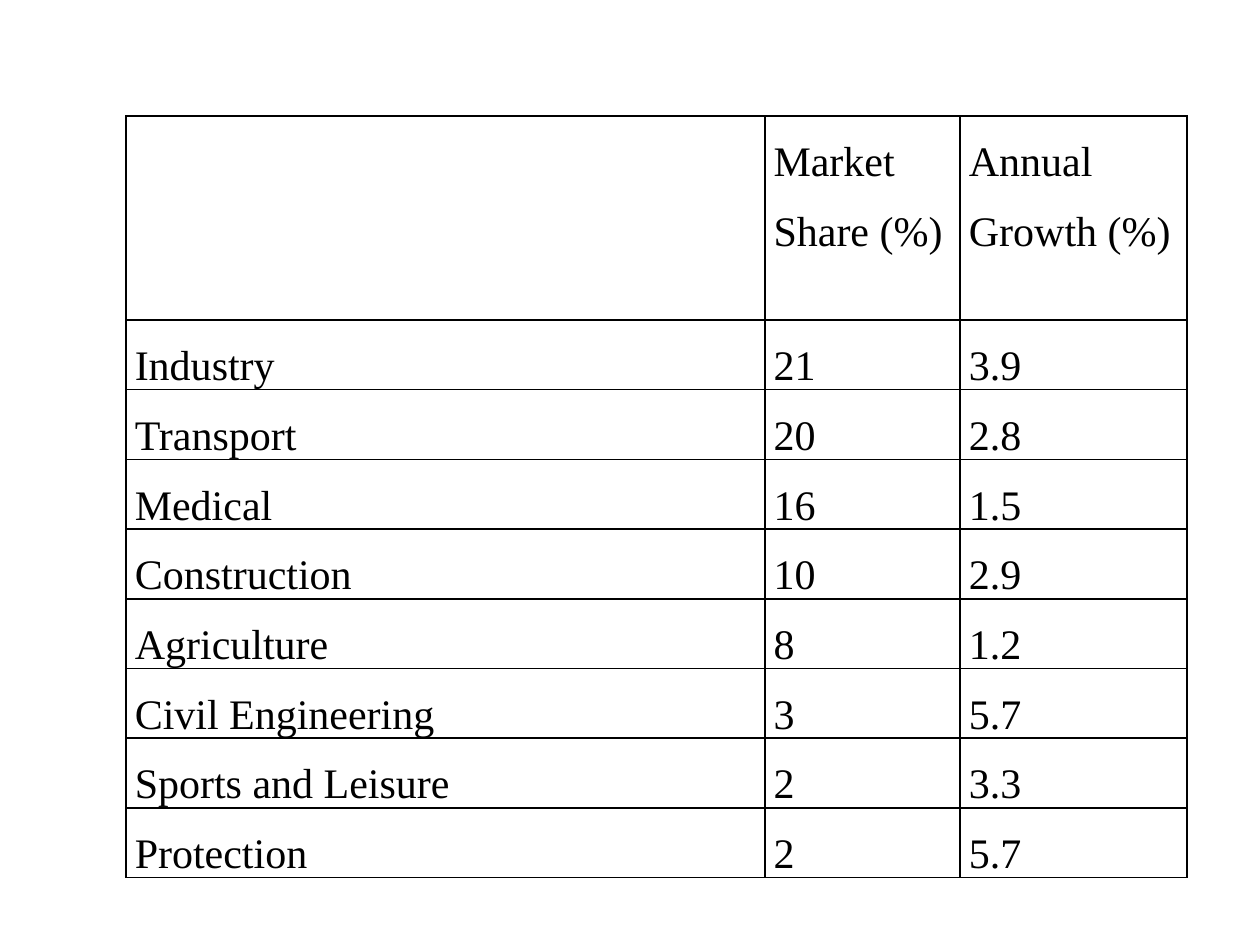
from lxml import etree
from pptx import Presentation
from pptx.dml.color import RGBColor
from pptx.oxml.ns import qn
from pptx.util import Inches, Pt

BLACK = RGBColor(0, 0, 0)
FONT = "Times New Roman"
SIDES = ("a:lnL", "a:lnR", "a:lnT", "a:lnB")

COLS = (5.07, 1.55, 1.8)
HEAD_H = 1.62
ROW_H = 0.55
ROWS = (
    ("", "Market Share (%)", "Annual Growth (%)"),
    ("Industry", "21", "3.9"),
    ("Transport", "20", "2.8"),
    ("Medical", "16", "1.5"),
    ("Construction", "10", "2.9"),
    ("Agriculture", "8", "1.2"),
    ("Civil Engineering", "3", "5.7"),
    ("Sports and Leisure", "2", "3.3"),
    ("Protection", "2", "5.7"),
)


def add_borders(cell):
    props = cell._tc.get_or_add_tcPr()
    for side in SIDES:
        line = etree.SubElement(props, qn(side), w=str(Pt(1)))
        fill = etree.SubElement(line, qn("a:solidFill"))
        etree.SubElement(fill, qn("a:srgbClr"), val=str(BLACK))


def fill_cell(cell, text):
    cell.margin_left = cell.margin_right = Inches(0.07)
    cell.margin_top = cell.margin_bottom = 0
    add_borders(cell)
    cell.fill.background()
    cell.text = text
    para = cell.text_frame.paragraphs[0]
    para.line_spacing = 1.5
    para.font.name = FONT
    para.font.size = Pt(24)
    para.font.color.rgb = BLACK


def add_market(slide, left, top, width, height):
    """Table of market share and growth by sector."""
    table = slide.shapes.add_table(
        len(ROWS), len(COLS), left, top, width, height).table
    table.first_row = table.horz_banding = False
    for col, size in zip(table.columns, COLS):
        col.width = Inches(size)
    for i, (row, texts) in enumerate(zip(table.rows, ROWS)):
        row.height = Inches(ROW_H if i else HEAD_H)
        for cell, text in zip(row.cells, texts):
            fill_cell(cell, text)


def main():
    deck = Presentation()
    deck.slide_width, deck.slide_height = Inches(10), Inches(7.5)
    slide = deck.slides.add_slide(deck.slide_layouts[6])
    height = HEAD_H + ROW_H * (len(ROWS) - 1)
    add_market(slide, Inches(1), Inches(0.92),
               Inches(sum(COLS)), Inches(height))
    deck.save("out.pptx")


if __name__ == "__main__":
    main()
